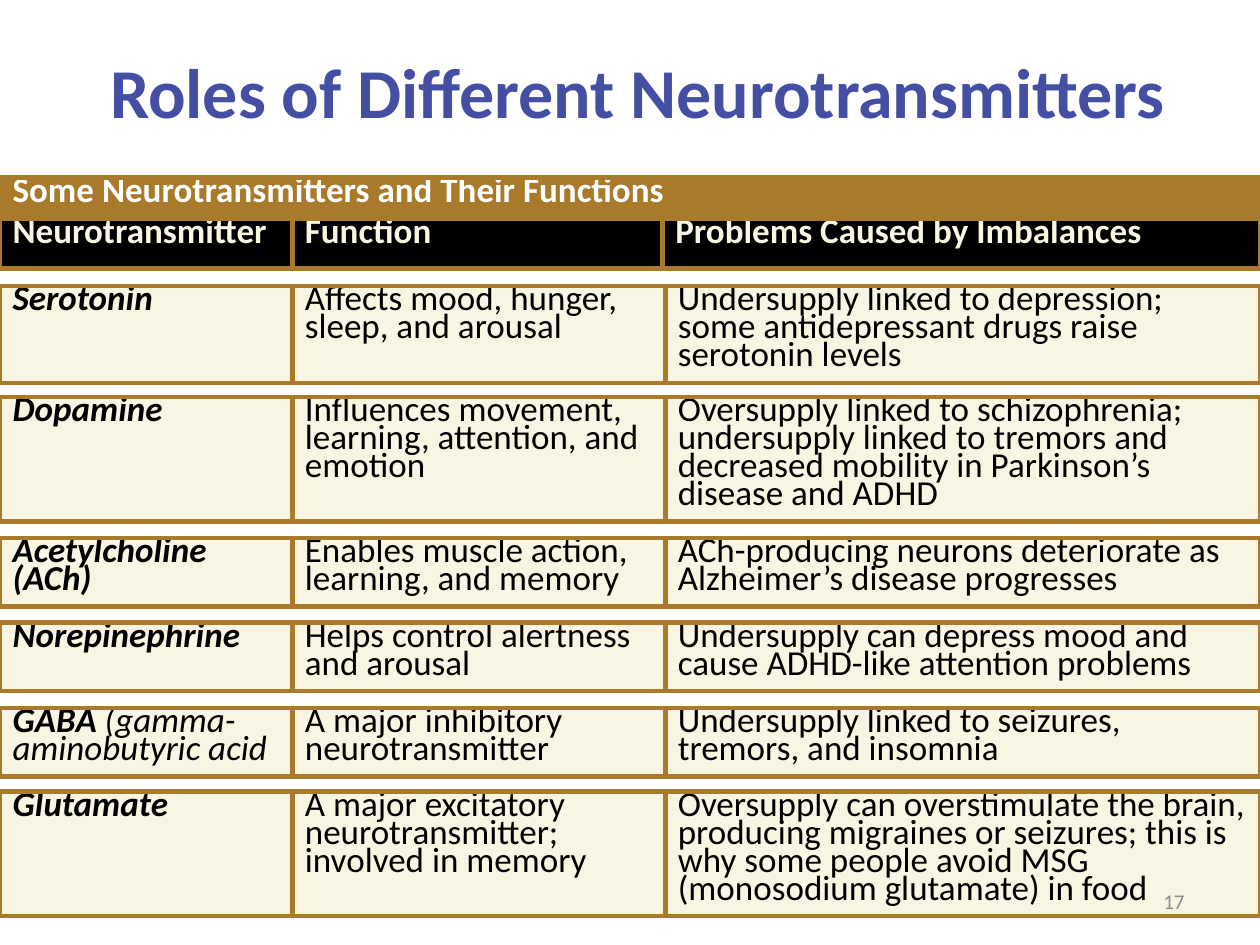
from dataclasses import dataclass

import pptx
import pptx.dml.color
import pptx.enum.text
import pptx.oxml
import pptx.oxml.ns
import pptx.util
from pptx.dml.color import RGBColor
from pptx.util import Inches

GOLD = RGBColor(0xAA, 0x7A, 0x2B)
CREAM = RGBColor(0xF8, 0xF6, 0xE3)
BLACK = RGBColor(0, 0, 0)
WHITE = RGBColor(0xFF, 0xFF, 0xFF)
INDIGO = RGBColor(0x44, 0x4E, 0xA2)
GRAY = RGBColor(0x89, 0x89, 0x89)

FONT = "Calibri"
BORDER_PT = 3
HEADER_COLS = (2.32, 2.94, 4.74)
BODY_COLS = (2.32, 2.96, 4.72)


@dataclass
class Neurotransmitter:
    top: float
    height: float
    name: str
    function: str
    problems: str
    note: str = ""


NEUROTRANSMITTERS = [
    Neurotransmitter(2.27, 0.77, "Serotonin", "Affects mood, hunger, sleep, and arousal",
                     "Undersupply linked to depression; some antidepressant drugs "
                     "raise serotonin levels"),
    Neurotransmitter(3.15, 0.99, "Dopamine",
                     "Influences movement, learning, attention, and emotion",
                     "Oversupply linked to schizophrenia; undersupply linked to tremors "
                     "and decreased mobility in Parkinson’s disease and ADHD"),
    Neurotransmitter(4.27, 0.54, "Acetylcholine (ACh)",
                     "Enables muscle action, learning, and memory",
                     "ACh-producing neurons deteriorate as Alzheimer’s disease progresses"),
    Neurotransmitter(4.94, 0.54, "Norepinephrine", "Helps control alertness and arousal",
                     "Undersupply can depress mood and cause ADHD-like attention problems"),
    Neurotransmitter(5.62, 0.54, "GABA", "A major inhibitory neurotransmitter",
                     "Undersupply linked to seizures, tremors, and insomnia",
                     note=" (gamma-aminobutyric acid"),
    Neurotransmitter(6.28, 0.99, "Glutamate",
                     "A major excitatory neurotransmitter; involved in memory",
                     "Oversupply can overstimulate the brain, producing migraines or "
                     "seizures; this is why some people avoid MSG (monosodium glutamate) "
                     "in food"),
]


def set_font(font, size: float, color: RGBColor, bold: bool = False,
             italic: bool = False) -> None:
    font.name = FONT
    font.size = pptx.util.Pt(size)
    font.color.rgb = color
    font.bold = bold
    font.italic = italic


def add_borders(cell) -> None:
    tc_pr = cell._tc.get_or_add_tcPr()
    for i, side in enumerate(("lnL", "lnR", "lnT", "lnB")):
        tc_pr.insert(i, pptx.oxml.parse_xml(
            f'<a:{side} {pptx.oxml.ns.nsdecls("a")} w="{pptx.util.Pt(BORDER_PT)}">'
            f'<a:solidFill><a:srgbClr val="{GOLD}"/></a:solidFill></a:{side}>'))


def fill_cell(cell, text: str, fill: RGBColor, color: RGBColor, bold: bool = False,
              italic: bool = False, note: str = "") -> None:
    """Write a cell; a note follows the text without bold."""
    cell.fill.solid()
    cell.fill.fore_color.rgb = fill
    p = cell.text_frame.paragraphs[0]
    p.line_spacing = pptx.util.Pt(16)
    set_font(p.font, 20, color, bold, italic)
    p.add_run().text = text
    if note:
        r = p.add_run()
        r.text = note
        r.font.bold = False


def add_grid(s, top: float, cols: tuple[float, ...], rows: tuple[float, ...]):
    """Add a full-width table with gold borders and no banding."""
    table = s.shapes.add_table(len(rows), len(cols), Inches(0), Inches(top),
                               Inches(10), Inches(sum(rows))).table
    table.first_row = table.horz_banding = False
    for column, width in zip(table.columns, cols):
        column.width = Inches(width)
    for row, height in zip(table.rows, rows):
        row.height = Inches(height)
    for cell in table.iter_cells():
        add_borders(cell)
        cell.margin_left = cell.margin_right = Inches(0.1)
        cell.margin_top = cell.margin_bottom = Inches(0.05)
    return table


def add_header(s) -> None:
    table = add_grid(s, 1.41, HEADER_COLS, (0.32, 0.4))
    table.cell(0, 0).merge(table.cell(0, 2))
    fill_cell(table.cell(0, 0), "Some Neurotransmitters and Their Functions",
              GOLD, WHITE, bold=True)
    headings = ("Neurotransmitter", "Function", "Problems Caused by Imbalances")
    for i, heading in enumerate(headings):
        fill_cell(table.cell(1, i), heading, BLACK, CREAM, bold=True)


def add_neurotransmitter(s, item: Neurotransmitter) -> None:
    table = add_grid(s, item.top, BODY_COLS, (item.height,))
    fill_cell(table.cell(0, 0), item.name, CREAM, BLACK, True, True, item.note)
    fill_cell(table.cell(0, 1), item.function, CREAM, BLACK)
    fill_cell(table.cell(0, 2), item.problems, CREAM, BLACK)


def add_text(s, box: tuple[float, float, float, float], text: str, size: float,
             color: RGBColor, align, bold: bool = False) -> None:
    tf = s.shapes.add_textbox(*map(Inches, box)).text_frame
    tf.word_wrap = True
    tf.vertical_anchor = pptx.enum.text.MSO_ANCHOR.MIDDLE
    p = tf.paragraphs[0]
    p.text = text
    p.alignment = align
    set_font(p.font, size, color, bold)


def main() -> None:
    prs = pptx.Presentation()
    prs.slide_width, prs.slide_height = Inches(10), Inches(7.5)
    s = prs.slides.add_slide(prs.slide_layouts[6])
    add_header(s)
    add_text(s, (0.56, 0.09, 9, 1.25), "Roles of Different Neurotransmitters", 40,
             INDIGO, pptx.enum.text.PP_ALIGN.CENTER, bold=True)
    for item in NEUROTRANSMITTERS:
        add_neurotransmitter(s, item)
    add_text(s, (7.17, 6.95, 2.33, 0.4), "17", 12, GRAY, pptx.enum.text.PP_ALIGN.RIGHT)
    prs.save("out.pptx")


if __name__ == "__main__":
    main()
